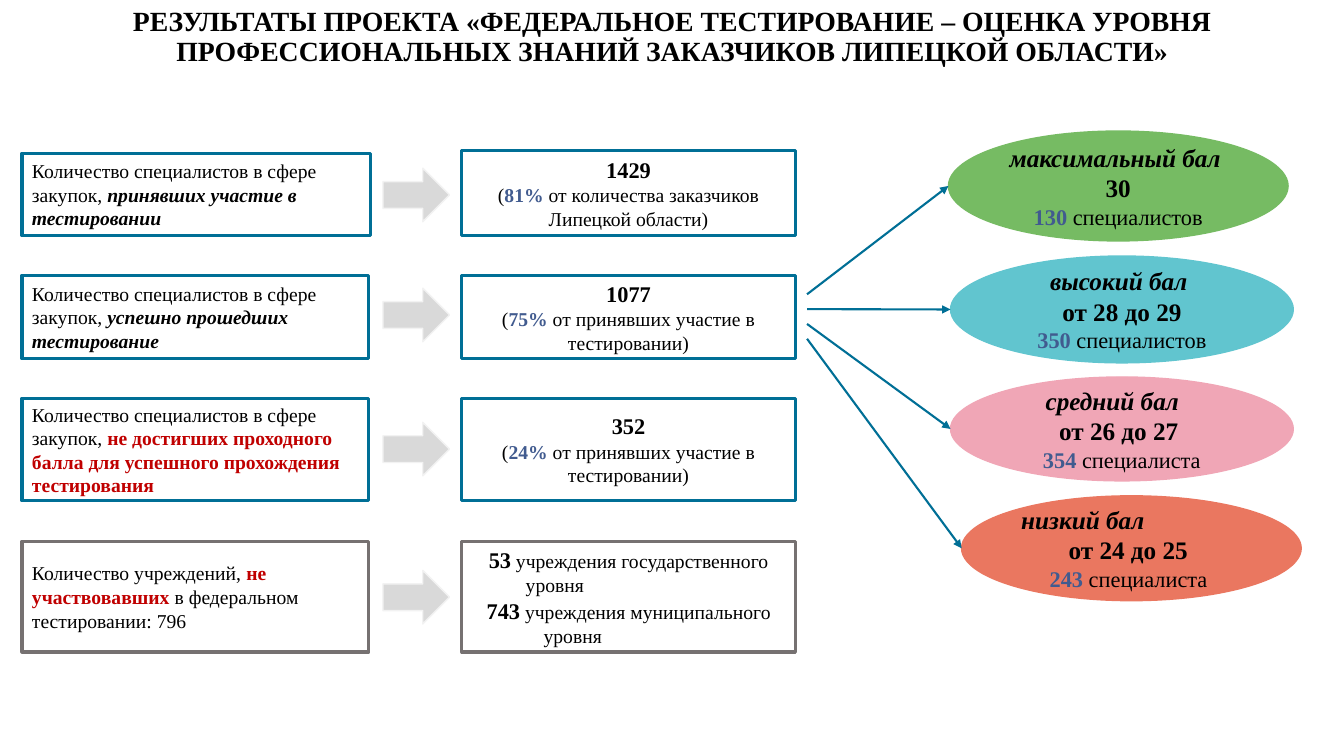
from pptx import Presentation
from pptx.dml.color import RGBColor
from pptx.enum.shapes import MSO_CONNECTOR, MSO_SHAPE
from pptx.enum.text import MSO_ANCHOR, PP_ALIGN
from pptx.oxml.ns import qn
from pptx.util import Pt
from lxml.etree import SubElement

BLACK = RGBColor(0x00, 0x00, 0x00)
WHITE = RGBColor(0xFF, 0xFF, 0xFF)
TEAL = RGBColor(0x00, 0x6F, 0x96)
GRAY = RGBColor(0x76, 0x71, 0x71)
ARROW_FILL = RGBColor(0xD9, 0xD9, 0xD9)
ARROW_LINE = RGBColor(0xF2, 0xF2, 0xF2)
RED = RGBColor(0xC0, 0x00, 0x00)
BLUE = RGBColor(0x41, 0x5B, 0x8F)
GREEN = RGBColor(0x76, 0xBB, 0x63)
CYAN = RGBColor(0x61, 0xC5, 0xCF)
PINK = RGBColor(0xF0, 0xA6, 0xB6)
CORAL = RGBColor(0xEA, 0x77, 0x60)

FONT = "Times New Roman"
BOLD = {"bold": True}
BOLD_ITALIC = {"bold": True, "italic": True}
RED_BOLD = {"bold": True, "color": RED}
BLUE_BOLD = {"bold": True, "color": BLUE}

SPECIALISTS = "Количество специалистов в сфере закупок, "

# Label top and height, result top and height, arrow top, outline, label runs
ROWS = [
    (109.4, 59, 107.3, 61.2, 120.2, TEAL,
     [(SPECIALISTS, {}), ("принявших участие в тестировании", BOLD_ITALIC)]),
    (196.6, 59.8, 196.6, 59.8, 205.9, TEAL,
     [(SPECIALISTS, {}), ("успешно прошедших тестирование", BOLD_ITALIC)]),
    (284.4, 73.4, 284.4, 73.4, 301.7, TEAL,
     [(SPECIALISTS, {}),
      ("не достигших проходного балла для успешного прохождения тестирования", RED_BOLD)]),
    (386.6, 79.2, 386.6, 79.2, 407.5, GRAY,
     [("Количество учреждений, ", {}), ("не участвовавших", RED_BOLD),
      (" в федеральном тестировании: 796", {})]),
]

# Count, share and explanation of the first three results
SHARES = [
    ("1429", "81%", " от количества заказчиков Липецкой области)"),
    ("1077", "75%", " от принявших участие в тестировании)"),
    ("352", "24%", " от принявших участие в тестировании)"),
]

# Count, level, left margin and first-line indent of the last result
INSTITUTIONS = [
    ("53", " учреждения государственного уровня", 38.6, -26.4),
    ("743", " учреждения муниципального уровня", 51.4, -40.7),
]

# Box, colour, name, name alignment and margin, range, count, noun
GRADES = [
    ((677.5, 93.6, 242.6, 78.5), GREEN, "максимальный бал ", PP_ALIGN.CENTER, 0,
     "30", "130 ", "специалистов"),
    ((679, 182.9, 244.8, 76.3), CYAN, "высокий бал ", PP_ALIGN.CENTER, 0,
     "от 28 до 29", "350 ", "специалистов"),
    ((679, 269.3, 244.8, 74.2), PINK, "средний бал", PP_ALIGN.LEFT, 25,
     "от 26 до 27 ", "354 ", "специалиста"),
    ((686.9, 354.2, 242.6, 74.9), CORAL, "низкий бал", PP_ALIGN.LEFT, 0,
     "от 24 до 25 ", "243 ", "специалиста "),
]


def add_box(slide, kind, box, fill, line, line_width):
    shape = slide.shapes.add_shape(kind, *(Pt(length) for length in box))
    shape.shadow.inherit = False
    shape.fill.solid()
    shape.fill.fore_color.rgb = fill
    shape.line.color.rgb = line
    shape.line.width = Pt(line_width)
    shape.text_frame.word_wrap = True
    shape.text_frame.vertical_anchor = MSO_ANCHOR.MIDDLE
    return shape


def write(paragraph, runs, size, align=PP_ALIGN.CENTER, margin=0, indent=0):
    paragraph.alignment = align
    paragraph.font.name = FONT
    paragraph.font.size = Pt(size)
    paragraph.font.color.rgb = BLACK
    if margin:
        properties = paragraph._p.get_or_add_pPr()
        properties.set("marL", str(Pt(margin)))
        properties.set("indent", str(Pt(indent)))
    for text, style in runs:
        run = paragraph.add_run()
        run.text = text
        font = run.font
        font.name = FONT
        font.size = Pt(style.get("size", size))
        font.bold = style.get("bold", False)
        font.italic = style.get("italic", False)
        font.color.rgb = style.get("color", BLACK)


def add_title(slide, left, top, width, height):
    frame = slide.shapes.add_textbox(Pt(left), Pt(top), Pt(width), Pt(height)).text_frame
    frame.word_wrap = True
    frame.vertical_anchor = MSO_ANCHOR.MIDDLE
    paragraph = frame.paragraphs[0]
    paragraph.line_spacing = 0.9
    write(paragraph, [("РЕЗУЛЬТАТЫ ПРОЕКТА «ФЕДЕРАЛЬНОЕ ТЕСТИРОВАНИЕ – ОЦЕНКА УРОВНЯ "
                       "ПРОФЕССИОНАЛЬНЫХ ЗНАНИЙ ЗАКАЗЧИКОВ ЛИПЕЦКОЙ ОБЛАСТИ»", BOLD)], 19.8)


def add_label(slide, box, outline, runs):
    shape = add_box(slide, MSO_SHAPE.RECTANGLE, box, WHITE, outline, 2.25)
    write(shape.text_frame.paragraphs[0], runs, 14, PP_ALIGN.LEFT)


def add_share(slide, box, outline, count, share, explanation):
    frame = add_box(slide, MSO_SHAPE.RECTANGLE, box, WHITE, outline, 2.25).text_frame
    write(frame.paragraphs[0], [(count, BOLD)], 16)
    write(frame.add_paragraph(), [("(", {}), (share, BLUE_BOLD), (explanation, {})], 14)


def add_institutions(slide, box, outline):
    frame = add_box(slide, MSO_SHAPE.RECTANGLE, box, WHITE, outline, 2.25).text_frame
    for index, (count, level, margin, indent) in enumerate(INSTITUTIONS):
        paragraph = frame.add_paragraph() if index else frame.paragraphs[0]
        write(paragraph, [(count, {"bold": True, "size": 16}), (level, {})], 14,
              PP_ALIGN.LEFT, margin, indent)


def add_rows(slide, left):
    for index, row in enumerate(ROWS):
        label_top, label_height, top, height, arrow_top, outline, runs = row
        label_width = 247.7 if index else 249.1
        add_label(slide, (left, label_top, label_width, label_height), outline, runs)
        add_box(slide, MSO_SHAPE.RIGHT_ARROW, (left + 257.8, arrow_top, 47.5, 38.2),
                ARROW_FILL, ARROW_LINE, 1)
        result_box = (left + 314, top, 238.3, height)
        if index < len(SHARES):
            add_share(slide, result_box, outline, *SHARES[index])
        else:
            add_institutions(slide, result_box, outline)


def add_grade(slide, box, color, name, align, margin, score, count, noun):
    frame = add_box(slide, MSO_SHAPE.OVAL, box, color, color, 1).text_frame
    write(frame.paragraphs[0], [(name, BOLD_ITALIC)], 18, align, margin)
    write(frame.add_paragraph(), [(score, BOLD)], 18)
    write(frame.add_paragraph(), [(count, BLUE_BOLD), (noun, {})], 16)


def add_pointer(slide, start_x, start_y, end_x, end_y):
    ends = (Pt(length) for length in (start_x, start_y, end_x, end_y))
    pointer = slide.shapes.add_connector(MSO_CONNECTOR.STRAIGHT, *ends)
    pointer.line.color.rgb = TEAL
    pointer.line.width = Pt(1.5)
    SubElement(pointer.line._get_or_add_ln(), qn("a:tailEnd"), type="triangle")
    SubElement(pointer._element.spPr, qn("a:effectLst"))


def add_grades(slide, pointer_left, pointer_top):
    for index, grade in enumerate(GRADES):
        left, top, width, height = grade[0]
        add_grade(slide, *grade)
        add_pointer(slide, pointer_left, pointer_top + 10.6 * index, left, top + height / 2)


def main():
    presentation = Presentation()
    presentation.slide_width = Pt(960)
    presentation.slide_height = Pt(540)
    slide = presentation.slides.add_slide(presentation.slide_layouts[6])
    add_title(slide, 0, 0, 960, 54)
    add_rows(slide, 15.8)
    add_grades(slide, 576.5, 210.2)
    presentation.save("out.pptx")


if __name__ == "__main__":
    main()
